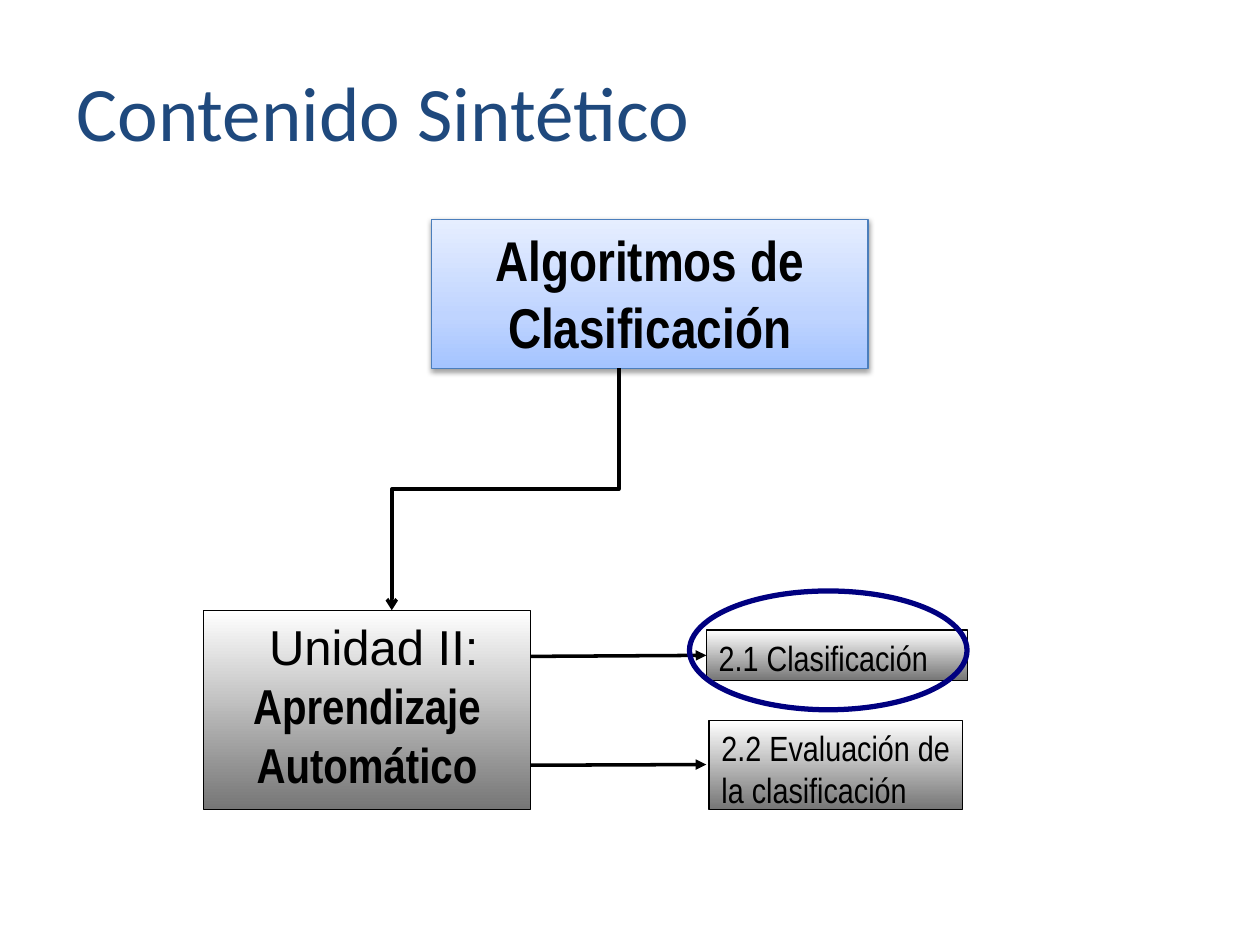
from lxml import etree
from pptx import Presentation
from pptx import util as u
from pptx.dml import color
from pptx.enum import shapes, text
from pptx.oxml import ns

Pt = u.Pt
THEME = {
    "title": "1F497D", "ink": "000000", "ring": "000080", "blue_line": "4B7EBC",
    "blue_fade": [(0, "E6EEFF"), (65, "BFD4FF"), (100, "A4C4FF")],
    "gray_fade": [(0, "FFFFFF"), (100, "767676")],
    "title_size": 44, "root_size": 32, "unit_size": 28, "topic_size": 20,
    "heading": "Calibri", "plain": "Arial", "narrow": "Arial Narrow",
}


def add(parent, tag, **attributes):
    """Append a DrawingML element and return it."""
    element = etree.SubElement(parent, ns.qn(f"a:{tag}"))
    for name, value in attributes.items():
        element.set(name, str(value))
    return element


def style(span, font, size, ink, bold=False):
    span.font.name, span.font.size, span.font.bold = font, Pt(size), bold
    span.font.color.rgb = color.RGBColor.from_string(ink)


deck = Presentation()
deck.slide_width, deck.slide_height = Pt(720), Pt(540)
page = deck.slides.add_slide(deck.slide_layouts[5])

title = page.shapes.title
title.left, title.top, title.width, title.height = Pt(36.5), Pt(21), Pt(648), Pt(84)
title.text_frame.text = "Contenido Sintético"
title.text_frame.vertical_anchor = text.MSO_ANCHOR.MIDDLE
title.text_frame.paragraphs[0].alignment = text.PP_ALIGN.LEFT
style(title.text_frame.paragraphs[0].runs[0], THEME["heading"], THEME["title_size"], THEME["title"])

# Boxes: place, fade, line colour, type size, alignment, paragraphs of (text, font, bold)
center, left = text.PP_ALIGN.CENTER, text.PP_ALIGN.LEFT
plain, narrow = THEME["plain"], THEME["narrow"]
boxes = [
    ((246.6, 125.3, 249.5, 85.2), "blue_fade", "blue_line", "root_size", center,
     [[("Algoritmos de Clasificación", narrow, True)]]),
    ((116.2, 348.8, 187, 113.7), "gray_fade", "ink", "unit_size", center,
     [[(" Unidad II: ", plain, False), ("Aprendizaje", narrow, True)],
      [("Automático", narrow, True)]]),
    ((403.6, 360, 149.4, 28.8), "gray_fade", "ink", "topic_size", left,
     [[("2.1 Clasificación", narrow, False)]]),
    ((405.2, 411.7, 144.9, 50.8), "gray_fade", "ink", "topic_size", left,
     [[("2.2 Evaluación de la clasificación", narrow, False)]]),
]
for place, fade, outline, size, alignment, paragraphs in boxes:
    box = page.shapes.add_shape(shapes.MSO_SHAPE.RECTANGLE, *map(Pt, place))
    box.shadow.inherit = False
    box.line.color.rgb = color.RGBColor.from_string(THEME[outline])
    box.line.width = Pt(0.75)
    box.fill.gradient()
    box.fill.gradient_angle = 270
    stops = box.element.spPr.find(".//" + ns.qn("a:gsLst"))
    stops.clear()
    for position, shade in THEME[fade]:
        add(add(stops, "gs", pos=position * 1000), "srgbClr", val=shade)
    if fade == "blue_fade":
        effects = box.element.spPr.find(ns.qn("a:effectLst"))
        shadow = add(effects, "outerShdw", blurRad=Pt(3.1), dist=Pt(1.6),
                     dir=5400000, rotWithShape=0)
        add(add(shadow, "srgbClr", val=THEME["ink"]), "alpha", val=38000)

    frame = box.text_frame
    frame.word_wrap = True
    frame.vertical_anchor = text.MSO_ANCHOR.TOP
    for index, spans in enumerate(paragraphs):
        para = frame.add_paragraph() if index else frame.paragraphs[0]
        para.alignment = alignment
        for words, font, bold in spans:
            span = para.add_run()
            span.text = words
            style(span, font, THEME[size], THEME["ink"], bold)

# Connectors: kind, start, end, arrowhead, turn in degrees
straight, elbow = shapes.MSO_CONNECTOR.STRAIGHT, shapes.MSO_CONNECTOR.ELBOW
connectors = [
    (straight, (303.2, 375.1), (403.6, 374.5), "triangle", 0),
    (straight, (303.2, 437.3), (403.6, 436.9), "triangle", 0),
    (elbow, (219.6, 214.7), (357.9, 344.4), "arrow", 90),
]
for kind, start, end, head, turn in connectors:
    link = page.shapes.add_connector(kind, *map(Pt, start + end))
    link.line.color.rgb = color.RGBColor.from_string(THEME["ink"])
    link.line.width = Pt(2)
    properties = link.element.spPr
    add(properties.find(ns.qn("a:ln")), "tailEnd", type=head)
    add(properties, "effectLst")
    if turn:
        properties.find(ns.qn("a:xfrm")).set("rot", str(turn * 60000))

ring = page.shapes.add_shape(shapes.MSO_SHAPE.OVAL, Pt(394), Pt(337.7), Pt(158.6), Pt(67.9))
ring.shadow.inherit = False
ring.fill.background()
ring.line.color.rgb = color.RGBColor.from_string(THEME["ring"])
ring.line.width = Pt(3)

deck.save("out.pptx")
